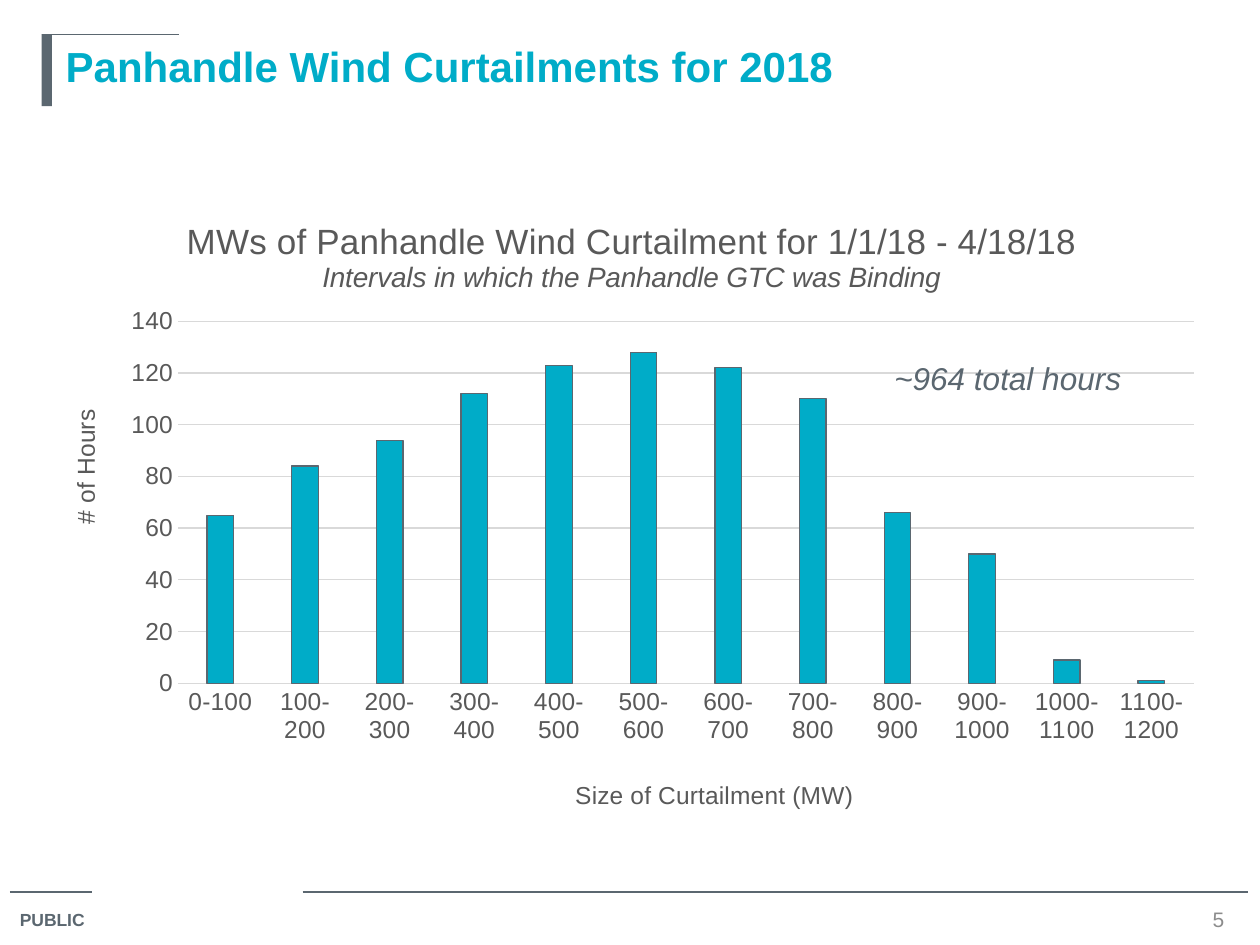
import pptx
import pptx.chart.data
import pptx.dml.color
import pptx.enum.chart
import pptx.enum.shapes
import pptx.enum.text
import pptx.oxml
import pptx.oxml.ns
import pptx.util
from dataclasses import dataclass

Cm, Pt = pptx.util.Cm, pptx.util.Pt
RGB = pptx.dml.color.RGBColor.from_string
ALIGN = pptx.enum.text.PP_ALIGN
ANCHOR = pptx.enum.text.MSO_ANCHOR


@dataclass(frozen=True)
class Theme:
    font: str = "Arial"
    teal: str = "00ACC8"
    slate: str = "5B6770"
    page: str = "8C8C8C"
    text: str = "595959"
    grid: str = "D9D9D9"
    title: int = 24
    chart_title: int = 20
    subtitle: int = 16
    note: int = 18
    axis: int = 14
    number: int = 12
    footer: int = 10
    rule: float = 0.75


theme = Theme()


def style(font, size, color, bold=False, italic=False):
    font.name, font.size = theme.font, Pt(size)
    font.bold, font.italic = bold, italic
    font.color.rgb = RGB(color)


def place_title(title, x, y):
    """Put a chart or axis title at fractions of the chart area."""
    c = title._element
    for old in c.findall(pptx.oxml.ns.qn("c:layout")):
        c.remove(old)
    layout = pptx.oxml.parse_xml(
        f'<c:layout {pptx.oxml.ns.nsdecls("c")}><c:manualLayout>'
        '<c:xMode val="edge"/><c:yMode val="edge"/>'
        f'<c:x val="{x}"/><c:y val="{y}"/></c:manualLayout></c:layout>')
    c.find(pptx.oxml.ns.qn("c:tx")).addnext(layout)


prs = pptx.Presentation()
prs.slide_width, prs.slide_height = Cm(25.4), Cm(19.05)
s = prs.slides.add_slide(prs.slide_layouts[5])

# Title
sp = s.shapes.title
sp.left, sp.top, sp.width, sp.height = Cm(1.07), Cm(0.69), Cm(23.5), Cm(3.18)
tf = sp.text_frame
tf.text = "Panhandle Wind Curtailments for 2018"
tf.auto_size = pptx.enum.text.MSO_AUTO_SIZE.NONE
tf.vertical_anchor = ANCHOR.TOP
tf.paragraphs[0].alignment = ALIGN.LEFT
style(tf.paragraphs[0].runs[0].font, theme.title, theme.teal, bold=True)

# Title bar and thin rules
bar = s.shapes.add_shape(pptx.enum.shapes.MSO_SHAPE.RECTANGLE,
                         Cm(0.84), Cm(0.69), Cm(0.21), Cm(1.45))
bar.shadow.inherit = False
bar.fill.solid()
bar.fill.fore_color.rgb = RGB(theme.slate)
bar.line.fill.background()

for x1, x2, y in [(0.84, 3.61, 0.69), (0.2, 1.85, 17.98), (6.1, 25.15, 17.98)]:
    rule = s.shapes.add_connector(pptx.enum.shapes.MSO_CONNECTOR.STRAIGHT,
                                  Cm(x1), Cm(y), Cm(x2), Cm(y))
    rule.line.color.rgb = RGB(theme.slate)
    rule.line.width = Pt(theme.rule)
    rule._element.spPr.append(
        pptx.oxml.parse_xml(f'<a:effectLst {pptx.oxml.ns.nsdecls("a")}/>'))

# Chart
data = pptx.chart.data.CategoryChartData()
data.categories = [f"{mw}-{mw + 100}" for mw in range(0, 1200, 100)]
data.add_series("Hours", [65, 84, 94, 112, 123, 128, 122, 110, 66, 50, 9, 1])
chart = s.shapes.add_chart(pptx.enum.chart.XL_CHART_TYPE.COLUMN_CLUSTERED,
                           Cm(0.84), Cm(3.86), Cm(23.7), Cm(12.65), data).chart
style(chart.font, theme.axis, theme.text)
chart.has_legend = False

tf = chart.chart_title.text_frame
tf.text = "MWs of Panhandle Wind Curtailment for 1/1/18 - 4/18/18"
style(tf.paragraphs[0].runs[0].font, theme.chart_title, theme.text)
p = tf.add_paragraph()
p.text = "Intervals in which the Panhandle GTC was Binding"
style(p.runs[0].font, theme.subtitle, theme.text, italic=True)
place_title(chart.chart_title, 0.12, 0.04)

plot = chart.plots[0]
plot.gap_width, plot.overlap, plot.vary_by_categories = 219, -27, False
bars = plot.series[0].format
bars.fill.solid()
bars.fill.fore_color.rgb = RGB(theme.teal)
bars.line.color.rgb = RGB(theme.slate)
bars.line.width = Pt(theme.rule)

hours, sizes = chart.value_axis, chart.category_axis
for axis, title, x, y in [(sizes, "Size of Curtailment (MW)", 0.45, 0.93),
                          (hours, "# of Hours", 0.02, 0.34)]:
    axis.major_tick_mark = axis.minor_tick_mark = pptx.enum.chart.XL_TICK_MARK.NONE
    style(axis.tick_labels.font, theme.axis, theme.text)
    tf = axis.axis_title.text_frame
    tf.text = title
    style(tf.paragraphs[0].runs[0].font, theme.axis, theme.text)
    place_title(axis.axis_title, x, y)
body = hours.axis_title.text_frame._txBody.bodyPr
body.set("rot", "-5400000")
body.set("vert", "horz")

hours.minimum_scale, hours.maximum_scale, hours.major_unit = 0, 140, 20
hours.format.line.fill.background()
for line in (sizes.format.line, hours.major_gridlines.format.line):
    line.color.rgb = RGB(theme.grid)
    line.width = Pt(theme.rule)

area = chart._chartSpace.chart.plotArea
for old in area.findall(pptx.oxml.ns.qn("c:layout")):
    area.remove(old)
area.insert(0, pptx.oxml.parse_xml(
    f'<c:layout {pptx.oxml.ns.nsdecls("c")}><c:manualLayout>'
    '<c:layoutTarget val="inner"/><c:xMode val="edge"/><c:yMode val="edge"/>'
    '<c:x val="0.116"/><c:y val="0.207"/><c:w val="0.864"/><c:h val="0.577"/>'
    '</c:manualLayout></c:layout>'))

# Note, footer and page number
for text, box, size, color, bold, italic, align, anchor in [
    ("~964 total hours", (17.78, 7.11, 5.72, 1.02), theme.note, theme.slate,
     False, True, ALIGN.LEFT, ANCHOR.TOP),
    ("PUBLIC", (0.15, 18.21, 1.96, 0.71), theme.footer, theme.slate,
     True, False, ALIGN.LEFT, ANCHOR.TOP),
    ("5", (23.93, 18.24, 1.27, 0.58), theme.number, theme.page,
     False, False, ALIGN.CENTER, ANCHOR.MIDDLE),
]:
    tf = s.shapes.add_textbox(*map(Cm, box)).text_frame
    tf.word_wrap = True
    tf.vertical_anchor = anchor
    tf.text = text
    tf.paragraphs[0].alignment = align
    style(tf.paragraphs[0].runs[0].font, size, color, bold, italic)

prs.save("out.pptx")
